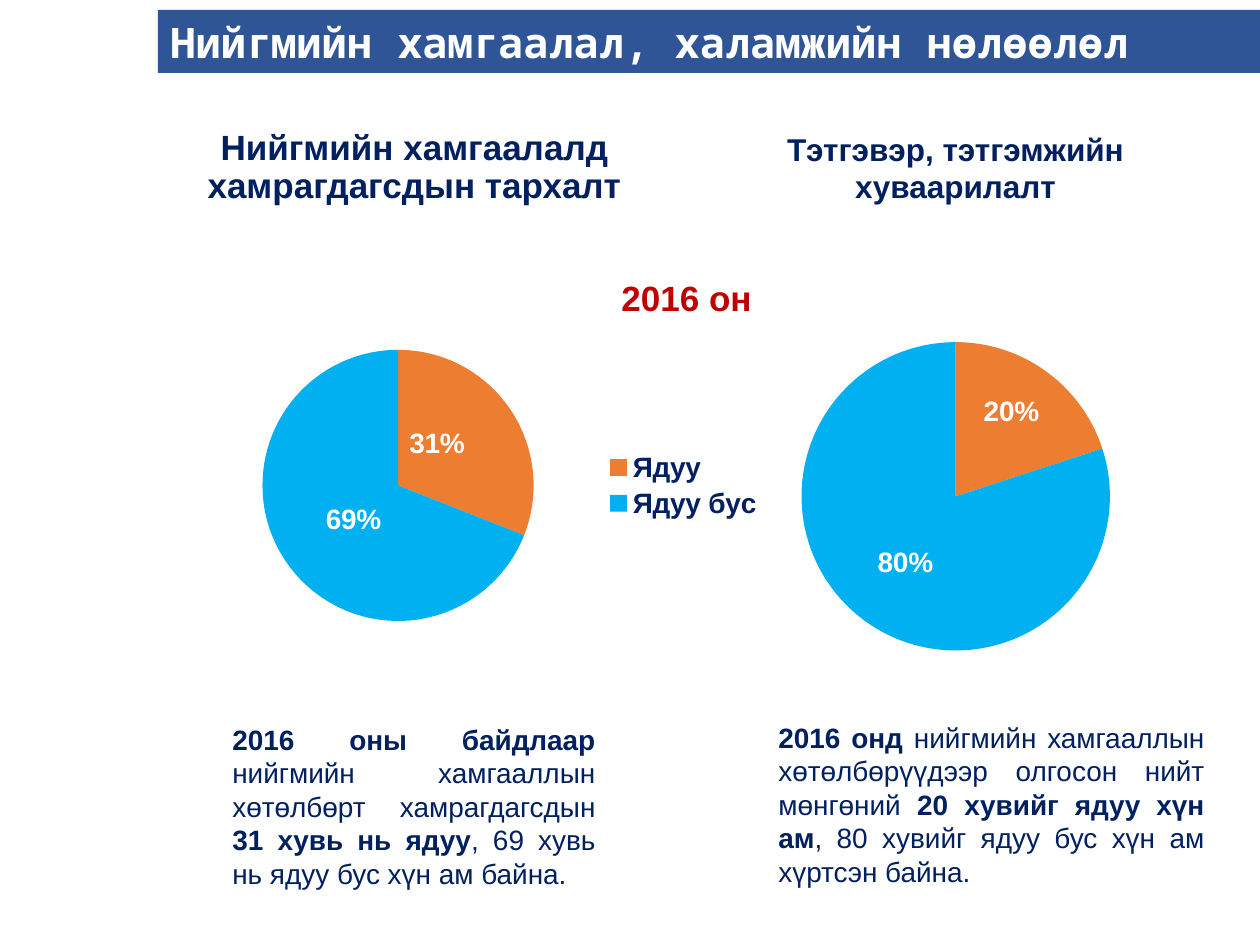
from pptx import Presentation, util as u
from pptx.chart.data import CategoryChartData
from pptx.dml.color import RGBColor
from pptx.enum import chart as charts, shapes, text
from pptx.oxml import parse_xml
from pptx.oxml.ns import nsdecls

PX = 914400 / 126
COLORS = {"navy": "002060", "red": "C00000", "white": "FFFFFF",
          "bar": "2F5597", "poor": "ED7D31", "nonpoor": "00B0F0"}


def box(*lengths):
    """Turn px lengths into EMU."""
    return [u.Emu(round(length * PX)) for length in lengths]


def write(shape, runs, size, color, align, font="Arial"):
    """Fill a shape with one paragraph of (text, bold) runs."""
    frame = shape.text_frame
    frame.word_wrap = True
    paragraph = frame.paragraphs[0]
    paragraph.alignment = align
    for words, bold in runs:
        run = paragraph.add_run()
        run.text = words
        run.font.name = font
        run.font.size = u.Pt(size)
        run.font.bold = bold
        run.font.color.rgb = RGBColor.from_string(COLORS[color])


presentation = Presentation()
presentation.slide_width, presentation.slide_height = box(1260, 945)
slide = presentation.slides.add_slide(presentation.slide_layouts[5])
left, center, justify = (text.PP_ALIGN.LEFT, text.PP_ALIGN.CENTER,
                         text.PP_ALIGN.JUSTIFY)

# Headings
title = slide.shapes.title
title.left, title.top, title.width, title.height = box(173, 126, 483, 84)
title.text_frame.vertical_anchor = text.MSO_ANCHOR.MIDDLE
write(title, [("Нийгмийн хамгаалалд хамрагдагсдын тархалт", True)],
      20, "navy", center)
title.text_frame.paragraphs[0].line_spacing = 0.9

heading = slide.shapes.add_textbox(*box(714, 136, 483, 63))
heading.text_frame.vertical_anchor = text.MSO_ANCHOR.MIDDLE
write(heading, [("Тэтгэвэр, тэтгэмжийн хуваарилалт", True)],
      18, "navy", center)

year = slide.shapes.add_textbox(*box(609, 270, 220, 55))
write(year, [("2016 он", True)], 20, "red", left)

# Filled text panels
panels = [
    ((220, 716, 388, 183), "white", 16, "navy", justify, "Arial",
     [("2016 оны байдлаар", True),
      (" нийгмийн хамгааллын хөтөлбөрт хамрагдагсдын ", False),
      ("31 хувь нь ядуу", True),
      (", 69 хувь нь ядуу бус хүн ам байна.", False)]),
    ((766, 714, 451, 183), "white", 16, "navy", justify, "Arial",
     [("2016 онд ", True),
      ("нийгмийн хамгааллын хөтөлбөрүүдээр олгосон нийт мөнгөний ", False),
      ("20 хувийг ядуу хүн ам", True),
      (", 80 хувийг ядуу бус хүн ам хүртсэн байна.", False)]),
    ((158, 10, 1102, 63), "bar", 24, "white", left, "Noto Sans Mono",
     [("Нийгмийн хамгаалал, халамжийн нөлөөлөл", True)]),
]
for place, fill, size, color, align, font, runs in panels:
    panel = slide.shapes.add_shape(shapes.MSO_SHAPE.RECTANGLE, *box(*place))
    panel.shadow.inherit = False
    panel.fill.solid()
    panel.fill.fore_color.rgb = RGBColor.from_string(COLORS[fill])
    panel.line.fill.background()
    panel.text_frame.vertical_anchor = text.MSO_ANCHOR.TOP
    write(panel, runs, size, color, align, font)

# Pie charts: place, categories, values, plot area, label shifts, legend
pies = [
    ((199, 286, 577, 399), ("Ядуу", "Ядуу бус"), (31, 69),
     (0.11, 0.16, 0.47, 0.68), ((-0.03, -0.01), (0.02, -0.01)), True),
    ((709, 315, 514, 378), ("1", "2"), (20, 80),
     (0.18, 0.07, 0.6, 0.82), ((0.02, -0.06), (-0.01, 0.01)), False),
]
for place, categories, values, plot_area, shifts, has_legend in pies:
    data = CategoryChartData()
    data.categories = categories
    data.add_series("Series 1", values)
    chart = slide.shapes.add_chart(charts.XL_CHART_TYPE.PIE, *box(*place),
                                   data).chart
    chart.has_title = False
    chart.font.name = "Arial"
    chart.font.size = u.Pt(16)
    chart.font.bold = True
    chart.font.color.rgb = RGBColor.from_string(COLORS["white"])
    chart.has_legend = has_legend
    if has_legend:
        chart.legend.position = charts.XL_LEGEND_POSITION.RIGHT
        chart.legend.include_in_layout = False
        chart.legend.font.name = "Arial"
        chart.legend.font.size = u.Pt(16)
        chart.legend.font.bold = True
        chart.legend.font.color.rgb = RGBColor.from_string(COLORS["navy"])

    plot = chart.plots[0]
    plot.vary_by_categories = True
    series = plot.series[0]
    for index, color in enumerate(("poor", "nonpoor")):
        point = series.points[index]
        point.format.fill.solid()
        point.format.fill.fore_color.rgb = RGBColor.from_string(COLORS[color])
        point.format.line.fill.background()

    labels = series.data_labels
    labels.show_percentage = True
    labels.show_value = False
    labels.number_format = "0%"
    labels.number_format_is_linked = False
    labels.position = charts.XL_LABEL_POSITION.CENTER
    labels.font.name = "Arial"
    labels.font.size = u.Pt(16)
    labels.font.bold = True
    labels.font.color.rgb = RGBColor.from_string(COLORS["white"])
    label_list = series._element.find("{*}dLbls")
    for index, (x, y) in enumerate(shifts):
        label_list.insert(index, parse_xml(
            f'<c:dLbl {nsdecls("c")}><c:idx val="{index}"/>'
            f'<c:layout><c:manualLayout><c:x val="{x}"/><c:y val="{y}"/>'
            '</c:manualLayout></c:layout>'
            '<c:numFmt formatCode="0%" sourceLinked="0"/>'
            '<c:dLblPos val="ctr"/><c:showLegendKey val="0"/>'
            '<c:showVal val="0"/><c:showCatName val="0"/>'
            '<c:showSerName val="0"/><c:showPercent val="1"/>'
            '<c:showBubbleSize val="0"/></c:dLbl>'))

    x, y, width, height = plot_area
    area = chart._chartSpace.find(".//{*}plotArea")
    for old_layout in area.findall("{*}layout"):
        area.remove(old_layout)
    area.insert(0, parse_xml(
        f'<c:layout {nsdecls("c")}><c:manualLayout>'
        '<c:layoutTarget val="inner"/>'
        '<c:xMode val="edge"/><c:yMode val="edge"/>'
        f'<c:x val="{x}"/><c:y val="{y}"/>'
        f'<c:w val="{width}"/><c:h val="{height}"/>'
        '</c:manualLayout></c:layout>'))

presentation.save("out.pptx")
